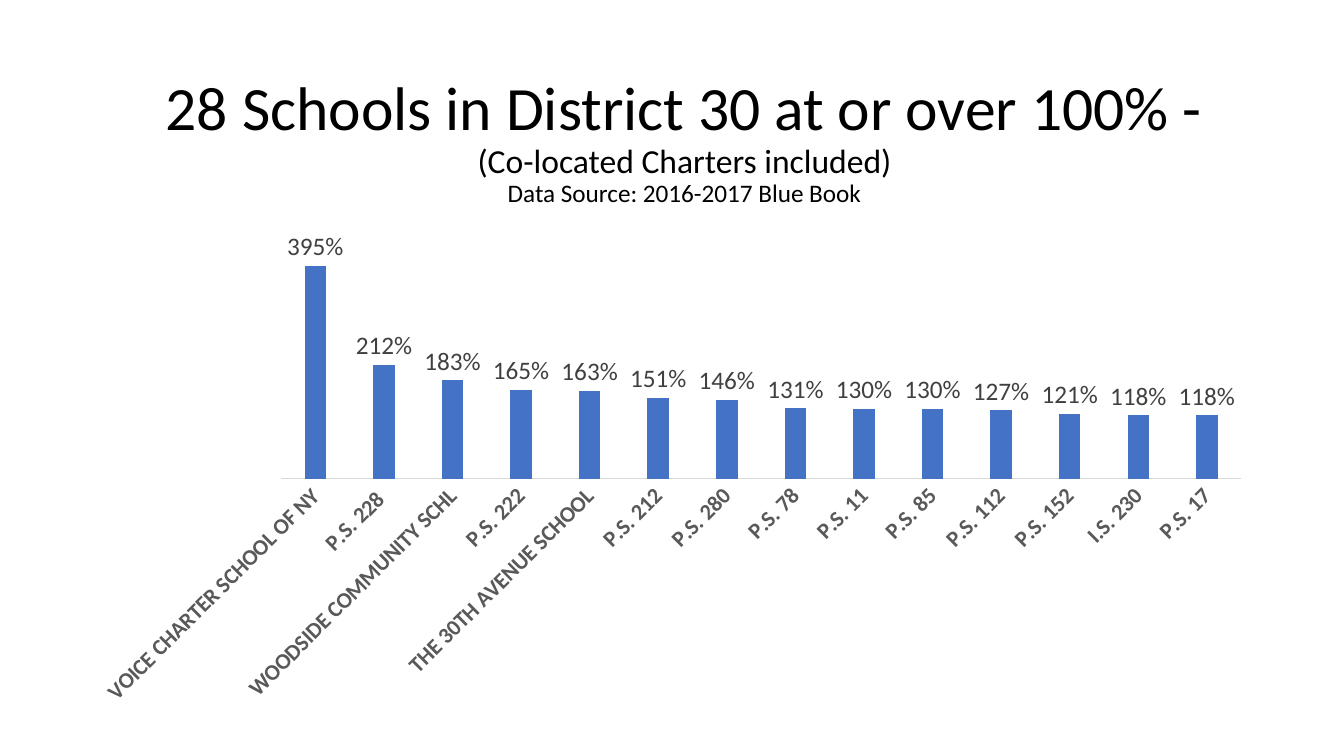
"""Build a slide charting the District 30 schools at or over full capacity."""
import pptx
import pptx.chart.data
import pptx.dml.color
import pptx.enum.chart
import pptx.enum.text
import pptx.util
from dataclasses import dataclass

Pt = pptx.util.Pt

TITLE_LINES = [
    ("28 Schools in District 30 at or over 100% -", "title"),
    ("(Co-located Charters included)", "subtitle"),
    ("Data Source: 2016-2017 Blue Book", "label"),
]
SCHOOLS = [
    ("VOICE CHARTER SCHOOL OF NY", 3.95),
    ("P.S. 228 ", 2.12),
    ("WOODSIDE COMMUNITY SCHL", 1.83),
    ("P.S. 222", 1.65),
    ("THE 30TH AVENUE SCHOOL", 1.63),
    ("P.S. 212", 1.51),
    ("P.S. 280", 1.46),
    ("P.S. 78", 1.31),
    ("P.S. 11", 1.3),
    ("P.S. 85", 1.3),
    ("P.S. 112", 1.27),
    ("P.S. 152", 1.21),
    ("I.S. 230", 1.18),
    ("P.S. 17", 1.18),
]
SLIDE_SIZE = (960, 540)
TITLE_BOX = (75, 49.5, 828, 104.5)
CHART_BOX = (56, 162, 847.5, 349)


@dataclass(frozen=True)
class Theme:
    """Font, colours and type sizes of the slide."""
    font: str = "Calibri"
    text: str = "000000"
    bar: str = "4472C4"
    value: str = "404040"
    category: str = "595959"
    axis: str = "D9D9D9"
    title: int = 44
    subtitle: int = 24
    label: int = 18
    school: int = 16
    base: int = 10


THEME = Theme()


def rgb(code):
    """Turn a hex code into a colour."""
    return pptx.dml.color.RGBColor.from_string(code)


def style_font(font, size, color, bold=False):
    """Apply the theme font with a size and colour."""
    font.name = THEME.font
    font.size = Pt(size)
    font.color.rgb = rgb(color)
    font.bold = bold


def add_title(page):
    """Add the centred heading as one paragraph of three lines."""
    box = page.shapes.add_textbox(*map(Pt, TITLE_BOX))
    frame = box.text_frame
    frame.word_wrap = True
    frame.vertical_anchor = pptx.enum.text.MSO_ANCHOR.MIDDLE
    para = frame.paragraphs[0]
    para.alignment = pptx.enum.text.PP_ALIGN.CENTER
    para.line_spacing = 0.9
    for index, (line, level) in enumerate(TITLE_LINES):
        if index:
            para.add_line_break()
        span = para.add_run()
        span.text = line
        style_font(span.font, getattr(THEME, level), THEME.text)


def add_school_chart(page):
    """Add the column chart of school utilization."""
    data = pptx.chart.data.CategoryChartData(number_format="0%")
    data.categories = [school for school, _ in SCHOOLS]
    data.add_series("Series 1", [rate for _, rate in SCHOOLS])
    kind = pptx.enum.chart.XL_CHART_TYPE.COLUMN_CLUSTERED
    chart = page.shapes.add_chart(kind, *map(Pt, CHART_BOX), data).chart
    chart.has_title = False
    chart.has_legend = False
    style_font(chart.font, THEME.base, THEME.text)

    plot = chart.plots[0]
    plot.vary_by_categories = False
    plot.gap_width = 219
    plot.overlap = -27
    fill = plot.series[0].format.fill
    fill.solid()
    fill.fore_color.rgb = rgb(THEME.bar)

    plot.has_data_labels = True
    labels = plot.data_labels
    labels.show_value = True
    labels.number_format = "0%"
    labels.number_format_is_linked = False
    labels.position = pptx.enum.chart.XL_LABEL_POSITION.OUTSIDE_END
    style_font(labels.font, THEME.label, THEME.value)

    schools = chart.category_axis
    schools.major_tick_mark = pptx.enum.chart.XL_TICK_MARK.NONE
    schools.format.line.color.rgb = rgb(THEME.axis)
    schools.format.line.width = Pt(0.75)
    style_font(schools.tick_labels.font, THEME.school, THEME.category, bold=True)
    schools._element.txPr.bodyPr.set("rot", "-2700000")

    rates = chart.value_axis
    rates.minimum_scale = 0
    rates.maximum_scale = 4.5
    rates.has_major_gridlines = False
    rates.visible = False


def main():
    """Build and save the deck."""
    deck = pptx.Presentation()
    deck.slide_width, deck.slide_height = map(Pt, SLIDE_SIZE)
    page = deck.slides.add_slide(deck.slide_layouts[6])
    add_title(page)
    add_school_chart(page)
    deck.save("out.pptx")


if __name__ == "__main__":
    main()
